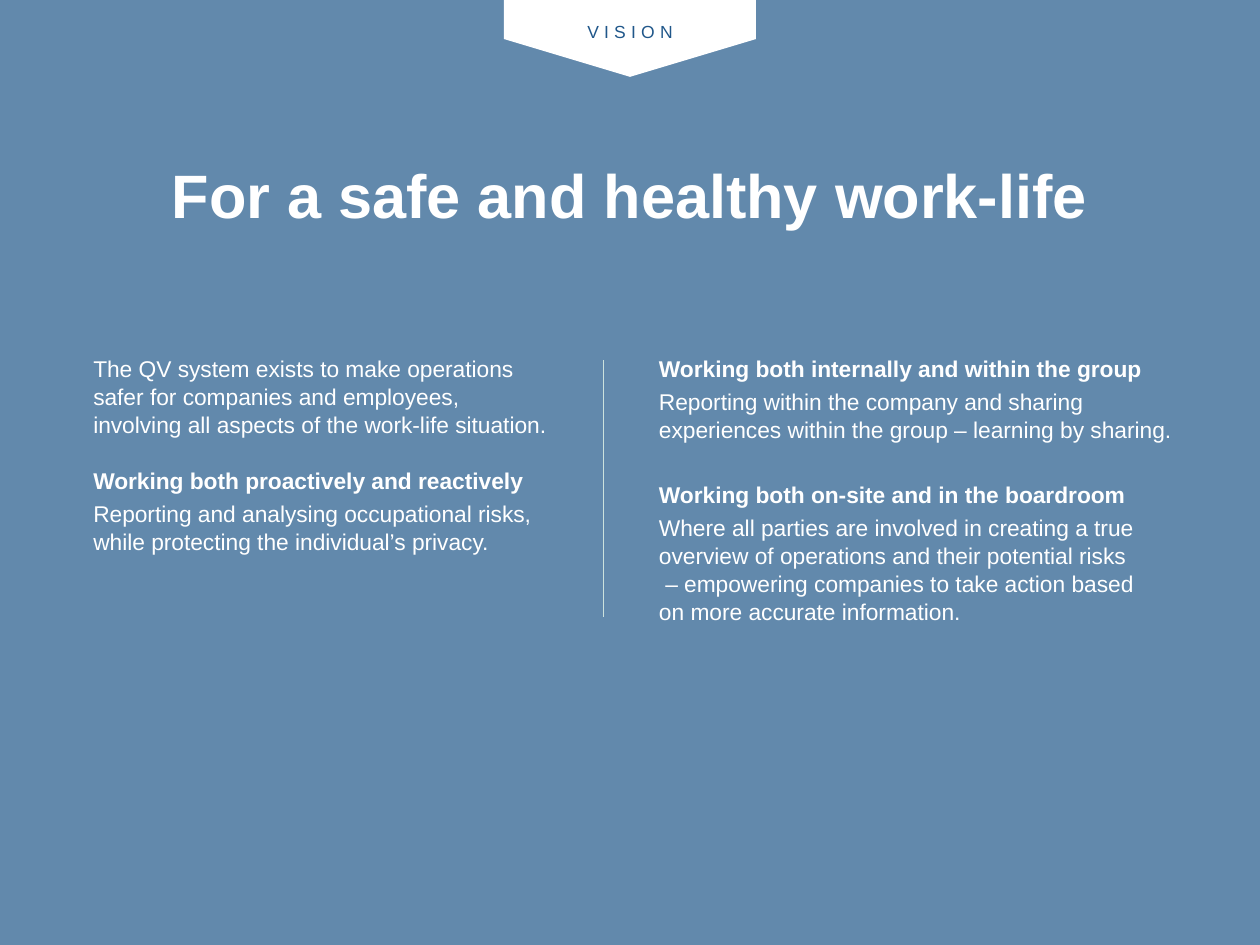
from dataclasses import dataclass

import pptx
import pptx.dml.color
import pptx.enum.dml
import pptx.enum.shapes
import pptx.enum.text
import pptx.oxml.ns
import pptx.util
from lxml import etree

Inches = pptx.util.Inches
Pt = pptx.util.Pt
RGBColor = pptx.dml.color.RGBColor
Shape = pptx.enum.shapes.MSO_SHAPE
Align = pptx.enum.text.PP_ALIGN
Anchor = pptx.enum.text.MSO_ANCHOR
qn = pptx.oxml.ns.qn

WHITE = RGBColor(0xFF, 0xFF, 0xFF)
NAVY = RGBColor(0x20, 0x57, 0x8A)
PALE_GREEN = RGBColor(0xCC, 0xE2, 0xDD)


@dataclass
class Entry:
    text: str
    bold: bool = False
    space_before: float = 0


@dataclass
class Column:
    left: float
    width: float
    entries: list[Entry]


COLUMNS = [
    Column(0.64, 4.05, [
        Entry("The QV system exists to make operations \n"
              "safer for companies and employees, \n"
              "involving all aspects of the work-life situation."),
        Entry("Working both proactively and reactively", True, 16),
        Entry("Reporting and analysing occupational risks, \n"
              "while protecting the individual’s privacy.", False, 3),
    ]),
    Column(5.13, 4.38, [
        Entry("Working both internally and within the group", True),
        Entry("Reporting within the company and sharing experiences "
              "within the group – learning by sharing.", False, 3),
        Entry("Working both on-site and in the boardroom", True, 21),
        Entry("Where all parties are involved in creating a true "
              "overview of operations and their potential risks\n"
              " – empowering companies to take action based \n"
              "on more accurate information.", False, 3),
    ]),
]


def place(shape, left: float, top: float, width: float, height: float) -> None:
    shape.left, shape.top = Inches(left), Inches(top)
    shape.width, shape.height = Inches(width), Inches(height)


def write(paragraph, text: str, *, size: float, color=WHITE, bold=False, align=Align.LEFT,
          line_spacing=1.0, space_before: float = 0, tracking: float = 0) -> None:
    """Fill a paragraph without a bullet; a newline becomes a line break."""
    properties = paragraph._p.get_or_add_pPr()
    properties.set("marL", "0")
    properties.set("indent", "0")
    etree.SubElement(properties, qn("a:buNone"))
    paragraph.alignment = align
    paragraph.line_spacing = line_spacing
    paragraph.space_before = Pt(space_before)
    for index, line in enumerate(text.split("\n")):
        if index:
            paragraph.add_line_break()
        run = paragraph.add_run()
        run.text = line
        run.font.name = "Arial"
        run.font.size = Pt(size)
        run.font.bold = bold
        run.font.color.rgb = color
        if tracking:
            run._r.get_or_add_rPr().set("spc", str(round(tracking * 100)))


def add_filled(shapes, kind, left: float, top: float, width: float, height: float, color):
    shape = shapes.add_shape(kind, Inches(left), Inches(top), Inches(width), Inches(height))
    shape.shadow.inherit = False
    shape.fill.solid()
    shape.fill.fore_color.rgb = color
    shape.line.fill.background()
    return shape


def add_backdrop(slide) -> None:
    """Cover the slide with translucent navy behind everything else."""
    backdrop = add_filled(slide.shapes, Shape.RECTANGLE, 0, 0, 10, 7.5, NAVY)
    color = backdrop._element.spPr.find(qn("a:solidFill")).find(qn("a:srgbClr"))
    etree.SubElement(color, qn("a:alpha")).set("val", "70000")
    slide.shapes._spTree.insert(2, backdrop._element)


def fill_column(placeholder, column: Column) -> None:
    place(placeholder, column.left, 2.76, column.width, 3.48)
    frame = placeholder.text_frame
    frame.auto_size = pptx.enum.text.MSO_AUTO_SIZE.NONE
    for index, entry in enumerate(column.entries):
        paragraph = frame.add_paragraph() if index else frame.paragraphs[0]
        write(paragraph, entry.text, size=13, bold=entry.bold,
              line_spacing=Pt(16), space_before=entry.space_before)


def add_divider(slide) -> None:
    divider = slide.shapes.add_connector(
        pptx.enum.shapes.MSO_CONNECTOR.STRAIGHT,
        Inches(4.79), Inches(2.86), Inches(4.79), Inches(4.9))
    divider.line.color.rgb = PALE_GREEN
    divider.line.width = Pt(1)
    etree.SubElement(divider._element.spPr, qn("a:effectLst"))


def add_section_tag(slide) -> None:
    pennant = slide.shapes.add_group_shape()
    point = add_filled(pennant.shapes, Shape.ISOSCELES_TRIANGLE, 4, 0.31, 2, 0.3, WHITE)
    point.rotation = 180
    add_filled(pennant.shapes, Shape.RECTANGLE, 4, 0, 2, 0.31, WHITE)

    label = slide.shapes.add_textbox(Inches(4), Inches(0.11), Inches(2), Inches(0.28))
    frame = label.text_frame
    frame.word_wrap = True
    frame.vertical_anchor = Anchor.MIDDLE
    frame.margin_left = frame.margin_right = Inches(0.06)
    frame.margin_top = frame.margin_bottom = Inches(0.06)
    write(frame.paragraphs[0], "VISION", size=10, color=NAVY, align=Align.CENTER, tracking=3)


def main() -> None:
    presentation = pptx.Presentation()
    presentation.slide_width, presentation.slide_height = Inches(10), Inches(7.5)
    slide = presentation.slides.add_slide(presentation.slide_layouts.get_by_name("Two Content"))
    title, *bodies = slide.placeholders

    add_backdrop(slide)
    place(title, 0, 0.98, 10, 1.2)
    title.text_frame.auto_size = pptx.enum.text.MSO_AUTO_SIZE.NONE
    title.text_frame.vertical_anchor = Anchor.MIDDLE
    write(title.text_frame.paragraphs[0], "For a safe and healthy work-life",
          size=35, bold=True, align=Align.CENTER, line_spacing=0.9)
    for placeholder, column in zip(bodies, COLUMNS):
        fill_column(placeholder, column)
    add_divider(slide)
    add_section_tag(slide)
    presentation.save("out.pptx")


if __name__ == "__main__":
    main()
